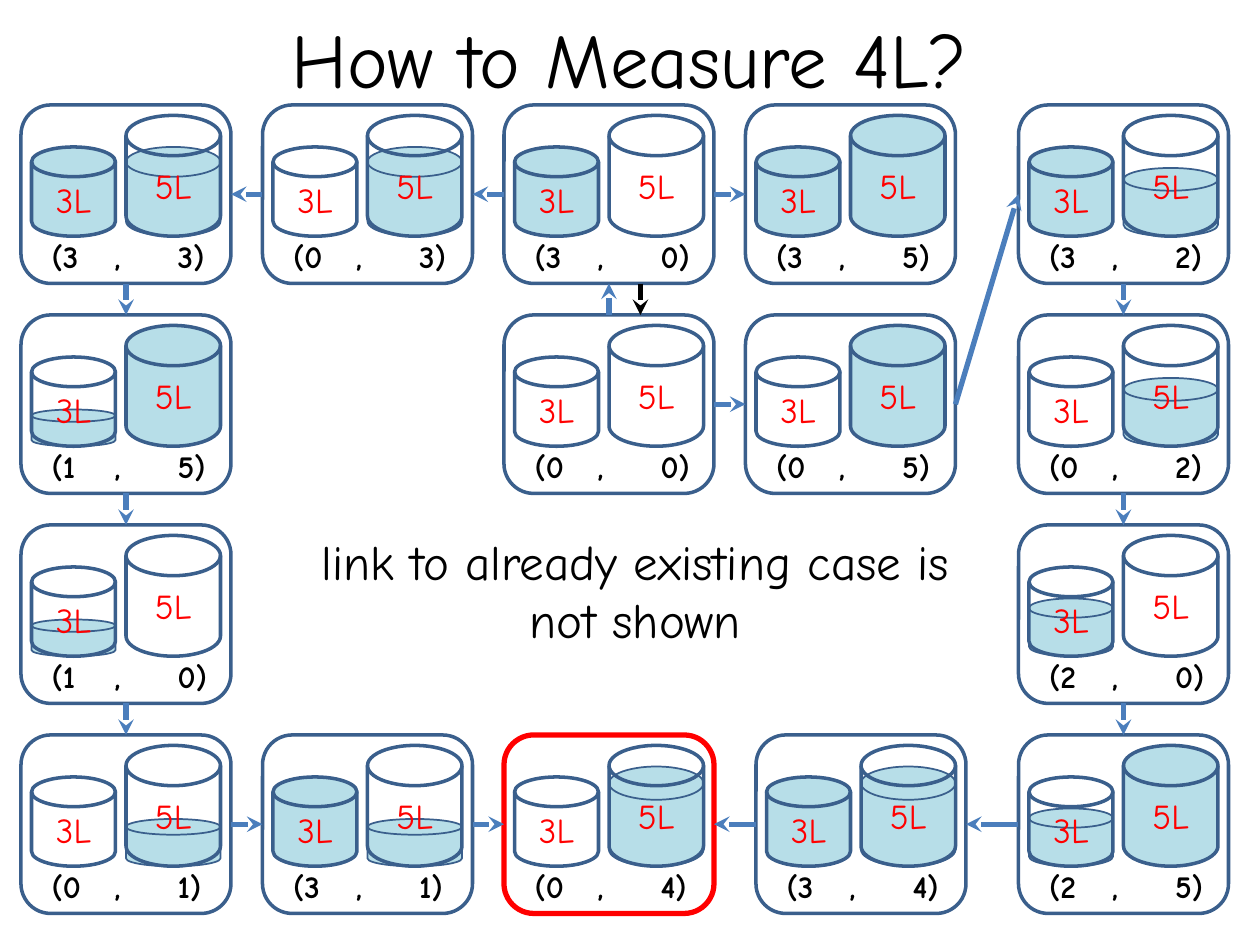
from lxml import etree
from pptx import Presentation
from pptx import util as u
from pptx.dml.color import RGBColor
from pptx.enum import shapes as sh, text as tx
from pptx.oxml.ns import qn

# Grid: every length is in twelfths of an inch
UNIT = 12
WIDE, HIGH = 20, 17
COLS = [2, 25, 48, 71, 97]
ROWS = [10, 30, 50, 70]
FLOOR = 12.5
TOP, LEFT, BOTTOM, RIGHT = range(4)

FONT = "Comic Neue"
BLACK, RED, WATER, EDGE, LINK = "000000", "FF0000", "B7DEE8", "3A5F8C", "4B7EBC"

# Jar size: (offset, width, water height by litres)
JARS = {
    3: (1, 8, {1: 3.5, 2: 5.5, 3: 8.5}),
    5: (10, 9, {1: 4.5, 2: 6.5, 3: 8.5, 4: 9.5, 5: 11.5}),
}

# State (litres in 3L, litres in 5L): (column, row)
STATES = {
    (3, 3): (COLS[0], 0), (0, 3): (COLS[1], 0), (3, 0): (COLS[2], 0),
    (3, 5): (COLS[3], 0), (3, 2): (COLS[4], 0),
    (1, 5): (COLS[0], 1), (0, 0): (COLS[2], 1), (0, 5): (COLS[3], 1),
    (0, 2): (COLS[4], 1),
    (1, 0): (COLS[0], 2), (2, 0): (COLS[4], 2),
    (0, 1): (COLS[0], 3), (3, 1): (COLS[1], 3), (0, 4): (COLS[2], 3),
    (3, 4): (COLS[3] + 1, 3), (2, 5): (COLS[4], 3),
}
GOAL = (0, 4)

# Chains of moves: leaving side, arriving side, states in order
CHAINS = [
    (TOP, BOTTOM, [(0, 0), (3, 0)]),
    (LEFT, RIGHT, [(3, 0), (0, 3), (3, 3)]),
    (RIGHT, LEFT, [(3, 0), (3, 5)]),
    (BOTTOM, TOP, [(3, 3), (1, 5), (1, 0), (0, 1)]),
    (RIGHT, LEFT, [(0, 1), (3, 1), (0, 4)]),
    (RIGHT, LEFT, [(0, 0), (0, 5), (3, 2)]),
    (BOTTOM, TOP, [(3, 2), (0, 2), (2, 0), (2, 5)]),
    (LEFT, RIGHT, [(2, 5), (3, 4), (0, 4)]),
]


def grid(*vals):
    return [u.Inches(v / UNIT) for v in vals]


def color(code):
    return RGBColor.from_string(code)


def write(shape, words, size, ink=BLACK, bold=False, align=None,
          anchor=None, wrap=True, grow=False, before=None, tab=None):
    frame = shape.text_frame
    frame.word_wrap = wrap
    if anchor is not None:
        frame.vertical_anchor = anchor
    if grow:
        frame.auto_size = tx.MSO_AUTO_SIZE.SHAPE_TO_FIT_TEXT
    para = frame.paragraphs[0]
    para.alignment = align
    if before:
        para.space_before = u.Pt(before)
    if tab:
        para._p.get_or_add_pPr().set("defTabSz", str(u.Inches(tab)))
    run = para.add_run()
    run.text = words
    run.font.name, run.font.size, run.font.bold = FONT, u.Pt(size), bold
    run.font.color.rgb = color(ink)


def label(slide, box, words, size, **form):
    write(slide.shapes.add_textbox(*grid(*box)), words, size, **form)


def block(slide, kind, box, fill=None, edge=EDGE, width=2):
    shape = slide.shapes.add_shape(kind, *grid(*box))
    shape.shadow.inherit = False
    if fill:
        shape.fill.solid()
        shape.fill.fore_color.rgb = color(fill)
    else:
        shape.fill.background()
    shape.line.color.rgb = color(edge)
    shape.line.width = u.Pt(width)
    return shape


def jar(slide, x, y, size, level):
    shift, wide, marks = JARS[size]
    full = marks[size]
    disk = sh.MSO_SHAPE.FLOWCHART_MAGNETIC_DISK

    def drum(high, **form):
        return block(slide, disk, (x + shift, y + FLOOR - high, wide, high), **form)

    # A part-filled jar has its water behind clear glass
    if 0 < level < size:
        drum(marks[level], fill=WATER, width=1)
    glass = drum(full, fill=WATER if level == size else None)
    write(glass, f"{size}L", 20, ink=RED, align=tx.PP_ALIGN.CENTER,
          anchor=tx.MSO_ANCHOR.MIDDLE)


def panel(slide, state):
    x, row = STATES[state]
    y = ROWS[row]
    for size, level in zip(JARS, state):
        jar(slide, x, y, size, level)
    label(slide, (x + 1.75, y + 12, 17.5, 4.8), "({}\t,\t{})".format(*state), 18,
          bold=True, wrap=False, grow=True, tab=0.5)
    goal = state == GOAL
    return block(slide, sh.MSO_SHAPE.ROUNDED_RECTANGLE, (x, y, WIDE, HIGH),
                 edge=RED if goal else EDGE, width=3 if goal else 2)


def arrow(slide, ends=(0, 0, 0, 0), ink=LINK):
    line = slide.shapes.add_connector(sh.MSO_CONNECTOR.STRAIGHT, *grid(*ends))
    line.line.color.rgb = color(ink)
    line.line.width = u.Pt(3)
    etree.SubElement(line.line._get_or_add_ln(), qn("a:tailEnd"), type="stealth")
    etree.SubElement(line._element.spPr, qn("a:effectLst"))
    return line


def main():
    deck = Presentation()
    deck.slide_width, deck.slide_height = u.Inches(10), u.Inches(7.5)
    slide = deck.slides.add_slide(deck.slide_layouts[6])

    # Title
    label(slide, (6, -2, 108, 15), "How to Measure 4L?", 44,
          align=tx.PP_ALIGN.CENTER, anchor=tx.MSO_ANCHOR.MIDDLE)

    # States
    panels = {state: panel(slide, state) for state in STATES}

    # Moves
    for out, into, chain in CHAINS:
        for start, stop in zip(chain, chain[1:]):
            line = arrow(slide)
            line.begin_connect(panels[start], out)
            line.end_connect(panels[stop], into)

    # Return move and note
    arrow(slide, (61, ROWS[0] + HIGH, 61, ROWS[1]), BLACK)
    label(slide, (29, 50, 63, 12.5), "link to already existing case is not shown",
          28, align=tx.PP_ALIGN.CENTER, grow=True, before=6)

    deck.save("out.pptx")


if __name__ == "__main__":
    main()
